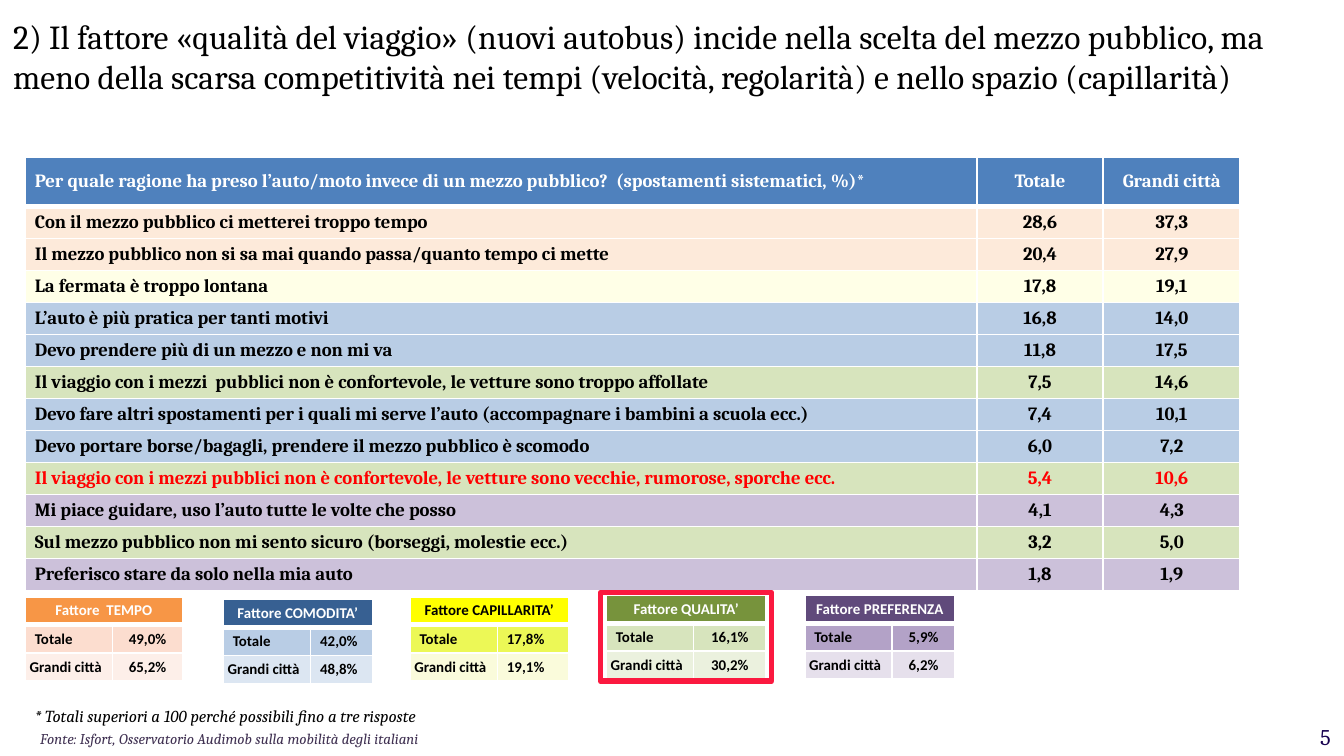
from lxml import etree
from pptx import Presentation, util as u
from pptx.dml import color
from pptx.enum import shapes, text
from pptx.oxml import ns

LEFT, CENTER = text.PP_ALIGN.LEFT, text.PP_ALIGN.CENTER
RIGHT, JUSTIFY = text.PP_ALIGN.RIGHT, text.PP_ALIGN.JUSTIFY


def rgb(value):
    return color.RGBColor.from_string(value)


def write(frame, content, size=10, font="Cambria", ink="000000",
          bold=False, italic=False, align=LEFT):
    paragraph = frame.paragraphs[0]
    paragraph.alignment = align
    run = paragraph.add_run()
    run.text = content
    run.font.size = u.Pt(size)
    run.font.name = font
    run.font.bold = bold
    run.font.italic = italic
    run.font.color.rgb = rgb(ink)
    return paragraph


class SlideBuilder:
    white = "FFFFFF"
    black = "000000"
    thin, thick = 1, 3

    def __init__(self, slide):
        self.slide = slide

    def label(self, left, top, width, height, content, wrap=True, **style):
        box = self.slide.shapes.add_textbox(
            u.Cm(left), u.Cm(top), u.Cm(width), u.Cm(height))
        box.text_frame.word_wrap = wrap
        return write(box.text_frame, content, **style)

    def frame(self, left, top, width, height, line_color, line_width):
        shape = self.slide.shapes.add_shape(
            shapes.MSO_SHAPE.RECTANGLE,
            u.Cm(left), u.Cm(top), u.Cm(width), u.Cm(height))
        shape.shadow.inherit = False
        shape.fill.background()
        shape.line.color.rgb = rgb(line_color)
        shape.line.width = u.Pt(line_width)

    def table(self, left, top, widths, heights):
        graphic = self.slide.shapes.add_table(
            len(heights), len(widths), u.Cm(left), u.Cm(top),
            u.Cm(sum(widths)), u.Cm(sum(heights)))
        table = graphic.table
        table.horz_banding = False
        for column, width in zip(table.columns, widths):
            column.width = u.Cm(width)
        for row, height in zip(table.rows, heights):
            row.height = u.Cm(height)
        return table

    def borders(self, cell, row):
        properties = cell._tc.get_or_add_tcPr()
        widths = {"lnL": self.thin, "lnR": self.thin,
                  "lnT": self.thick if row == 1 else self.thin,
                  "lnB": self.thick if row == 0 else self.thin}
        for side, width in widths.items():
            line = etree.SubElement(properties, ns.qn("a:" + side), w=str(u.Pt(width)))
            fill = etree.SubElement(line, ns.qn("a:solidFill"))
            etree.SubElement(fill, ns.qn("a:srgbClr"), val=self.white)

    def row(self, table, index, values, fill, aligns, side_margin=0.18, **style):
        for column, (value, align) in enumerate(zip(values, aligns)):
            cell = table.cell(index, column)
            cell.vertical_anchor = text.MSO_ANCHOR.MIDDLE
            cell.margin_left = cell.margin_right = u.Cm(
                0.18 if column else side_margin)
            cell.margin_top = cell.margin_bottom = u.Cm(0.09)
            self.borders(cell, index)
            cell.fill.solid()
            cell.fill.fore_color.rgb = rgb(fill)
            if value:
                write(cell.text_frame, value, bold=True, align=align, **style)

    def reasons(self, header, rows):
        table = self.table(0.48, 2.97, [17.98, 2.39, 2.59], [0.93] + [0.6] * len(rows))
        aligns = [LEFT, CENTER, CENTER]
        self.row(table, 0, header, "4F81BD", aligns, ink=self.white)
        for index, (fill, ink, *values) in enumerate(rows, 1):
            self.row(table, index, values, fill, aligns, ink=ink)

    def factor(self, left, top, width, name, fills, values, align, ink):
        table = self.table(left, top, [1.65, width], [0.53] * 3)
        table.cell(0, 0).merge(table.cell(0, 1))
        style = dict(size=8, font="Calibri")
        self.row(table, 0, [f"Fattore {name}", ""], fills[0],
                 [CENTER, CENTER], ink=ink, **style)
        lines = zip(["Totale", "Grandi città"], values, fills[1:], [0.18, 0.08])
        for index, (title, value, fill, margin) in enumerate(lines, 1):
            self.row(table, index, [title, value], fill, [LEFT, align], margin, **style)


PEACH, CREAM, BLUE, GREEN, LILAC = "FDEADA", "FFFFE7", "B9CDE5", "D7E4BD", "CCC1DA"
BLACK, RED, WHITE = "000000", "FF0000", "FFFFFF"

HEADER = ["Per quale ragione ha preso l’auto/moto invece di un mezzo pubblico?  "
          "(spostamenti sistematici, %)*", "Totale", "Grandi città"]
REASONS = [
    (PEACH, BLACK, "Con il mezzo pubblico ci metterei troppo tempo", "28,6", "37,3"),
    (PEACH, BLACK, "Il mezzo pubblico non si sa mai quando passa/quanto tempo ci mette",
     "20,4", "27,9"),
    (CREAM, BLACK, "La fermata è troppo lontana", "17,8", "19,1"),
    (BLUE, BLACK, "L’auto è più pratica per tanti motivi", "16,8", "14,0"),
    (BLUE, BLACK, "Devo prendere più di un mezzo e non mi va", "11,8", "17,5"),
    (GREEN, BLACK, "Il viaggio con i mezzi  pubblici non è confortevole, "
     "le vetture sono troppo affollate", "7,5", "14,6"),
    (BLUE, BLACK, "Devo fare altri spostamenti per i quali mi serve l’auto "
     "(accompagnare i bambini a scuola ecc.)", "7,4", "10,1"),
    (BLUE, BLACK, "Devo portare borse/bagagli, prendere il mezzo pubblico è scomodo",
     "6,0", "7,2"),
    (GREEN, RED, "Il viaggio con i mezzi pubblici non è confortevole, "
     "le vetture sono vecchie, rumorose, sporche ecc.", "5,4", "10,6"),
    (LILAC, BLACK, "Mi piace guidare, uso l’auto tutte le volte che posso", "4,1", "4,3"),
    (GREEN, BLACK, "Sul mezzo pubblico non mi sento sicuro (borseggi, molestie ecc.)",
     "3,2", "5,0"),
    (LILAC, BLACK, "Preferisco stare da solo nella mia auto", "1,8", "1,9"),
]
FACTORS = [
    (0.48, 11.28, 1.32, " TEMPO", ["F79646", "FCDDCF", "FDEFE9"],
     ["49,0%", "65,2%"], CENTER, WHITE),
    (4.22, 11.33, 1.17, "COMODITA’", ["376092", "B9CDE5", "DCE6F2"],
     ["42,0%", "48,8%"], LEFT, WHITE),
    (7.75, 11.28, 1.35, "CAPILLARITA’", ["FFFF00", "ECF856", "FAFBDB"],
     ["17,8%", "19,1%"], LEFT, BLACK),
    (11.46, 11.25, 1.37, "QUALITA’", ["77933C", "D7E4BD", "EBF1DE"],
     ["16,1%", "30,2%"], CENTER, WHITE),
    (15.21, 11.25, 1.19, "PREFERENZA", ["604A7B", "B3A2C7", "E6E0EC"],
     ["5,9%", "6,2%"], CENTER, WHITE),
]


def main():
    presentation = Presentation()
    presentation.slide_width = u.Cm(25.4)
    presentation.slide_height = u.Cm(14.29)
    builder = SlideBuilder(presentation.slides.add_slide(presentation.slide_layouts[6]))
    builder.label(24.31, 13.54, 1.09, 0.76, "5", size=12, ink="170050", align=RIGHT)
    builder.reasons(HEADER, REASONS)
    for factor in FACTORS:
        builder.factor(*factor)
    builder.label(0.41, 13.21, 8.15, 0.64,
                  "* Totali superiori a 100 perché possibili fino a tre risposte",
                  wrap=False, size=9, italic=True)
    source = builder.label(0.51, 13.67, 7.95, 0.61,
                           "Fonte: Isfort, Osservatorio Audimob sulla mobilità degli italiani",
                           wrap=False, size=8, ink="403152", italic=True, align=JUSTIFY)
    source.space_after = u.Pt(2)
    builder.label(0, 0.18, 24.21, 2.36,
                  "2) Il fattore «qualità del viaggio» (nuovi autobus) incide nella scelta "
                  "del mezzo pubblico, ma meno della scarsa competitività nei tempi "
                  "(velocità, regolarità) e nello spazio (capillarità)", size=18)
    builder.frame(11.35, 11.2, 3.23, 1.68, "FB193F", 3)
    presentation.save("out.pptx")


if __name__ == "__main__":
    main()
